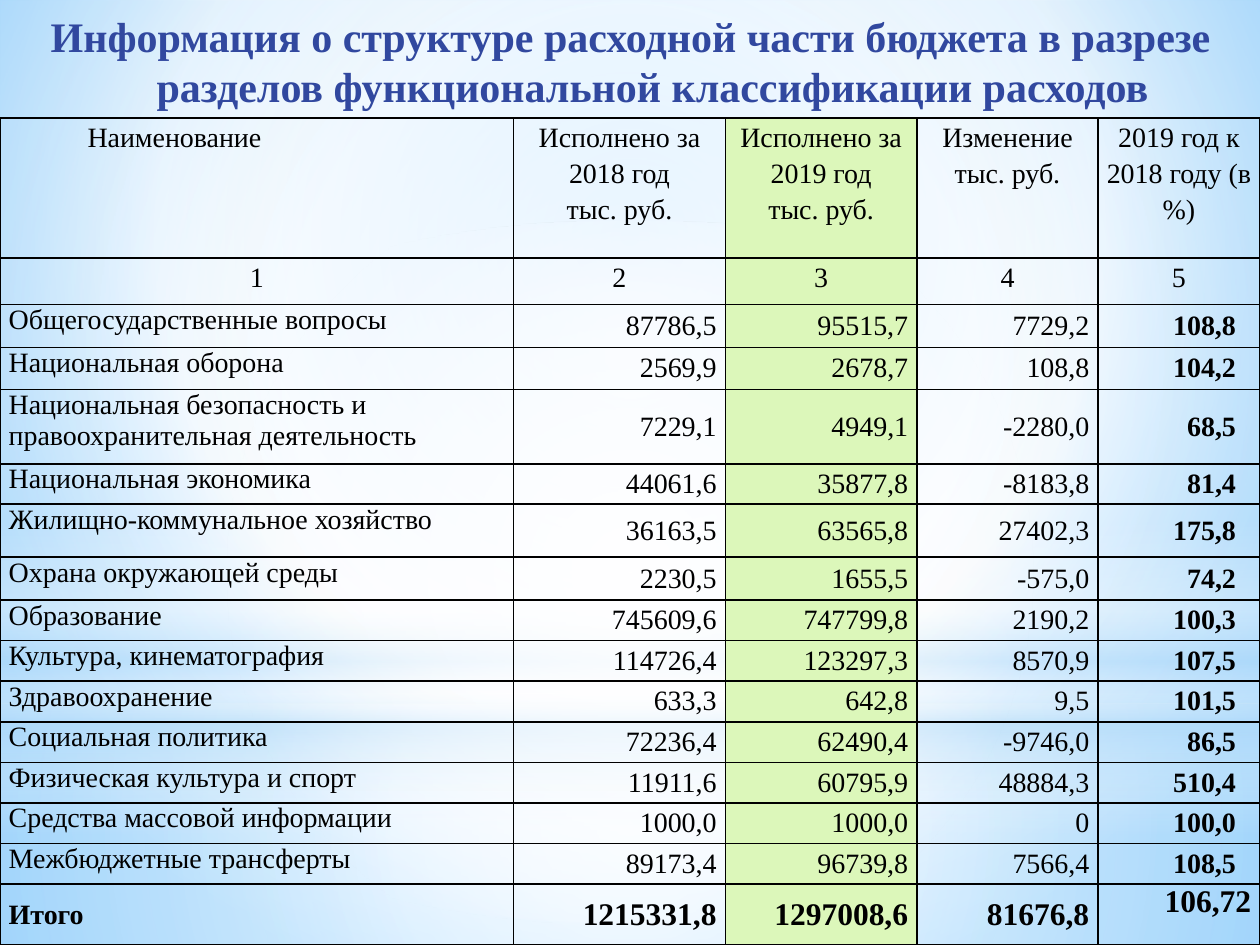
from lxml import etree
from pptx import Presentation
from pptx.dml.color import RGBColor
from pptx.enum.shapes import MSO_SHAPE as Shape
from pptx.enum.text import MSO_ANCHOR as Anchor, PP_ALIGN as Align
from pptx.oxml import parse_xml
from pptx.oxml.ns import nsdecls, qn
from pptx.util import Pt

FONT = "Times New Roman"
BLACK, TITLE_BLUE, GREEN = "000000", "31489F", "DCF7BA"
WHITE, SKY = "FFFFFF", "B4DCFA"

TITLE = ("Информация о структуре расходной части бюджета в разрезе "
         "разделов функциональной классификации расходов")

HEADERS = [
    ["Наименование"],
    ["Исполнено за 2018 год", "тыс. руб."],
    ["Исполнено за 2019 год", "тыс. руб."],
    ["Изменение тыс. руб."],
    ["2019 год к 2018 году (в %)"],
]

SECTIONS = [
    ("Общегосударственные вопросы", "87786,5", "95515,7", "7729,2", "108,8"),
    ("Национальная оборона", "2569,9", "2678,7", "108,8", "104,2"),
    ("Национальная безопасность и правоохранительная деятельность",
     "7229,1", "4949,1", "-2280,0", "68,5"),
    ("Национальная экономика", "44061,6", "35877,8", "-8183,8", "81,4"),
    ("Жилищно-коммунальное хозяйство", "36163,5", "63565,8", "27402,3", "175,8"),
    ("Охрана окружающей среды", "2230,5", "1655,5", "-575,0", "74,2"),
    ("Образование", "745609,6", "747799,8", "2190,2", "100,3"),
    ("Культура, кинематография", "114726,4", "123297,3", "8570,9", "107,5"),
    ("Здравоохранение", "633,3", "642,8", "9,5", "101,5"),
    ("Социальная политика", "72236,4", "62490,4", "-9746,0", "86,5"),
    ("Физическая культура и спорт", "11911,6", "60795,9", "48884,3", "510,4"),
    ("Средства массовой информации", "1000,0", "1000,0", "0", "100,0"),
    ("Межбюджетные трансферты", "89173,4", "96739,8", "7566,4", "108,5"),
]
TOTAL = ("Итого", "1215331,8", "1297008,6", "81676,8", "106,72")

COLUMN_WIDTHS = [293.5, 121, 109.5, 103.5, 92.5]
ROW_HEIGHTS = [80, 26.5, 24.5, 24.2, 42.5, 23, 30.3, 24.5] + [23.2] * 7 + [34.6]
GREEN_COLUMN, PERCENT_COLUMN = 2, 4

# Gradients: stops are (position, colour, opacity), all in percent
CENTRE = (50, 50, 50, 50)
BACKGROUND_STOPS = [(0, "9ED5FF", 100), (60, WHITE, 100), (100, "5BB9FF", 100)]
GLOWS = [
    (Shape.RECTANGLE, 402, 138, CENTRE,
     [(0, WHITE, 91), (37, WHITE, 76), (100, SKY, 79)]),
    (Shape.RECTANGLE, 0, 402, CENTRE,
     [(0, WHITE, 89), (48, WHITE, 62), (100, SKY, 79)]),
    (Shape.RECTANGLE, 297, 180, None,
     [(0, WHITE, 0), (29, WHITE, 30), (45, SKY, 40),
      (55, WHITE, 26), (65, SKY, 60), (100, WHITE, 0)]),
    (Shape.OVAL, 126, 402, CENTRE, [(0, WHITE, 100), (56, WHITE, 0)]),
]


def color(value):
    return RGBColor.from_string(value)


def set_gradient(fill, properties, stops, focus):
    """Radial towards the focus rectangle, or top to bottom without one."""
    fill.solid()
    fill.fore_color.rgb = color(WHITE)
    stop_xml = "".join(
        f'<a:gs pos="{position * 1000}"><a:srgbClr val="{value}">'
        f'<a:alpha val="{opacity * 1000}"/></a:srgbClr></a:gs>'
        for position, value, opacity in stops)
    if focus:
        left, top, right, bottom = (part * 1000 for part in focus)
        direction = (f'<a:path path="circle"><a:fillToRect l="{left}" t="{top}" '
                     f'r="{right}" b="{bottom}"/></a:path>')
    else:
        direction = '<a:lin ang="5400000" scaled="0"/>'
    gradient = parse_xml(f'<a:gradFill {nsdecls("a")} rotWithShape="1">'
                         f'<a:gsLst>{stop_xml}</a:gsLst>{direction}</a:gradFill>')
    properties.replace(properties.find(qn("a:solidFill")), gradient)


def set_font(paragraph, size, value, bold):
    font = paragraph.font
    font.name, font.size, font.bold = FONT, Pt(size), bold
    font.color.rgb = color(value)


def set_indent(paragraph, left, first):
    properties = paragraph._p.get_or_add_pPr()
    properties.set("marL", str(Pt(left)))
    properties.set("indent", str(Pt(first)))


def add_borders(cell):
    properties = cell._tc.get_or_add_tcPr()
    for index, side in enumerate(("lnL", "lnR", "lnT", "lnB")):
        line = etree.Element(qn(f"a:{side}"), w=str(Pt(1)))
        solid = etree.SubElement(line, qn("a:solidFill"))
        etree.SubElement(solid, qn("a:srgbClr"), val=BLACK)
        properties.insert(index, line)


def fill_cell(cell, lines, align, anchor=Anchor.TOP, size=16, bold=False,
              spacing=1.0, right=5):
    cell.margin_left, cell.margin_right = Pt(5), Pt(right)
    cell.margin_top = cell.margin_bottom = Pt(0)
    cell.vertical_anchor = anchor
    cell.text_frame.text = "\n".join(lines)
    for paragraph in cell.text_frame.paragraphs:
        paragraph.alignment = align
        paragraph.line_spacing = spacing
        set_font(paragraph, size, BLACK, bold)


presentation = Presentation()
presentation.slide_width, presentation.slide_height = Pt(720), Pt(540)
slide = presentation.slides.add_slide(presentation.slide_layouts[6])

# Background with soft glows
background_fill = slide.background.fill
background_fill.solid()
set_gradient(background_fill, slide.element.find(".//" + qn("p:bgPr")),
             BACKGROUND_STOPS, (20, 10, 20, 60))
for kind, top, height, focus, stops in GLOWS:
    shape = slide.shapes.add_shape(kind, Pt(0), Pt(top), Pt(720), Pt(height))
    shape.shadow.inherit = False
    shape.line.fill.background()
    set_gradient(shape.fill, shape._element.spPr, stops, focus)

# Title
title = slide.shapes.add_textbox(Pt(14.4), Pt(0), Pt(692), Pt(60.5))
frame = title.text_frame
frame.word_wrap = True
frame.margin_top = Pt(6)
paragraph = frame.paragraphs[0]
paragraph.text = TITLE
paragraph.alignment = Align.CENTER
set_indent(paragraph, 25, -25)
set_font(paragraph, 24, TITLE_BLUE, True)

# Table grid
table = slide.shapes.add_table(len(ROW_HEIGHTS), len(COLUMN_WIDTHS), Pt(0), Pt(67.5),
                               Pt(720), Pt(sum(ROW_HEIGHTS))).table
table.first_row = table.horz_banding = False
for column, width in zip(table.columns, COLUMN_WIDTHS):
    column.width = Pt(width)
for row, height in zip(table.rows, ROW_HEIGHTS):
    row.height = Pt(height)
    for index, cell in enumerate(row.cells):
        if index == GREEN_COLUMN:
            cell.fill.solid()
            cell.fill.fore_color.rgb = color(GREEN)
        else:
            cell.fill.background()
        add_borders(cell)

# Header and column numbers
for index, lines in enumerate(HEADERS):
    fill_cell(table.cell(0, index), lines, Align.CENTER if index else Align.JUSTIFY,
              spacing=1.15)
    fill_cell(table.cell(1, index), [str(index + 1)], Align.CENTER, spacing=1.15)
set_indent(table.cell(0, 0).text_frame.paragraphs[0], 0, 45)

# Budget sections
for row, (name, *values) in enumerate(SECTIONS, start=2):
    fill_cell(table.cell(row, 0), [name], Align.LEFT)
    for index, value in enumerate(values, start=1):
        percent = index == PERCENT_COLUMN
        fill_cell(table.cell(row, index), [value], Align.RIGHT, Anchor.MIDDLE,
                  bold=percent, right=13.7 if percent else 5)

# Total
last = len(ROW_HEIGHTS) - 1
fill_cell(table.cell(last, 0), TOTAL[:1], Align.LEFT, bold=True, spacing=1.5)
for index, value in enumerate(TOTAL[1:], start=1):
    anchor = Anchor.TOP if index == PERCENT_COLUMN else Anchor.MIDDLE
    fill_cell(table.cell(last, index), [value], Align.RIGHT, anchor, size=18, bold=True)

presentation.save("out.pptx")
